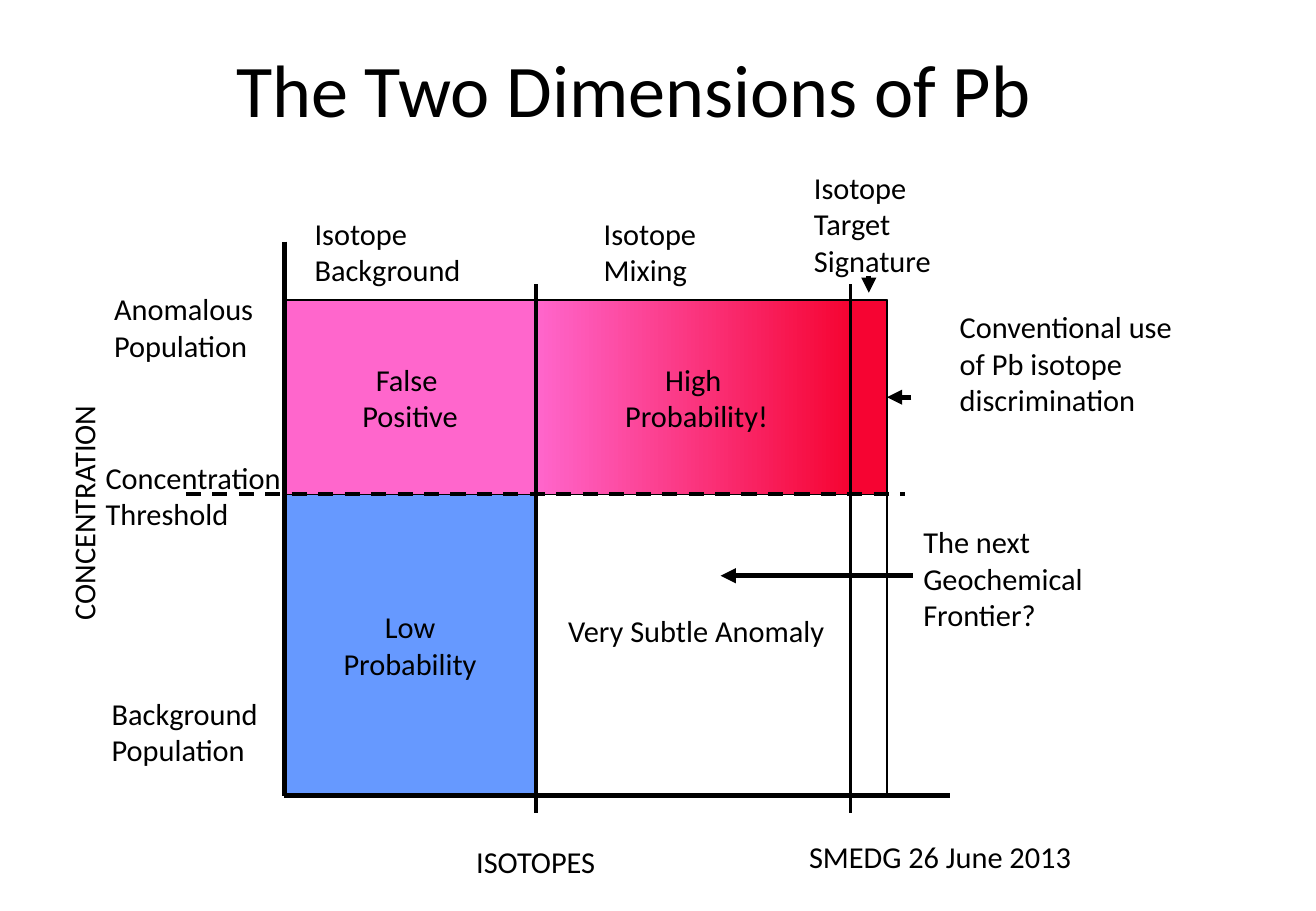
from dataclasses import dataclass
from typing import Any

from lxml import etree
from pptx import Presentation
from pptx import util as u
from pptx.dml.color import RGBColor
from pptx.enum import dml, shapes, text
from pptx.oxml import ns

COLORS = {"ink": "000000", "pink": "FF66CC", "red": "F60432", "blue": "6699FF"}
LEFT, BACKGROUND_EDGE, TARGET_EDGE, RIGHT = 2.34, 4.41, 7.0, 7.3
TOP, THRESHOLD, BOTTOM = 2.47, 4.07, 6.55
TARGET_MIDDLE = (TOP + THRESHOLD) / 2
BODY_FONT = {"name": "Calibri", "size": u.Pt(18)}
TITLE_FONT = {"name": "Calibri", "size": u.Pt(44)}
LABEL_FRAME = {"word_wrap": False, "auto_size": text.MSO_AUTO_SIZE.SHAPE_TO_FIT_TEXT}
CENTRED_FRAME = {"word_wrap": False, "vertical_anchor": text.MSO_ANCHOR.MIDDLE}
TITLE_FRAME = {"word_wrap": True, "margin_top": u.Inches(0.08)}


@dataclass
class Cell:
    left: float
    top: float
    right: float
    bottom: float
    fills: tuple[str, ...] = ()
    lines: tuple[str, ...] = ()


@dataclass
class Line:
    x1: float
    y1: float
    x2: float
    y2: float
    width: float
    dashed: bool = False
    arrow: bool = False


@dataclass
class Label:
    left: float
    top: float
    width: float
    height: float
    lines: tuple[str, ...]
    rotation: float = 0


FRAME = Cell(LEFT, TOP, RIGHT, BOTTOM)
GRID_LINES = [
    Line(LEFT, THRESHOLD, RIGHT, THRESHOLD, 0.75),
    Line(TARGET_EDGE, TOP, TARGET_EDGE, BOTTOM, 0.75),
    Line(BACKGROUND_EDGE, TOP, BACKGROUND_EDGE, BOTTOM, 0.75, dashed=True),
]
TARGET = Cell(TARGET_EDGE, TOP, RIGHT, THRESHOLD, ("red",))
CELLS = [
    Cell(BACKGROUND_EDGE, TOP, TARGET_EDGE, THRESHOLD, ("pink", "red"), ("High", " Probability!")),
    Cell(LEFT, TOP, BACKGROUND_EDGE, THRESHOLD, ("pink",), ("False ", "Positive")),
    Cell(LEFT, THRESHOLD, BACKGROUND_EDGE, BOTTOM, ("blue",), ("Low", "Probability")),
]
MAIN_LINES = [
    Line(1.53, THRESHOLD, 7.45, THRESHOLD, 2.25, dashed=True),
    Line(TARGET_EDGE, 2.34, TARGET_EDGE, 6.69, 2.25),
    Line(BACKGROUND_EDGE, 2.34, BACKGROUND_EDGE, 6.69, 2.25),
    Line(LEFT, 1.99, LEFT, BOTTOM, 3),
    Line(LEFT, BOTTOM, 7.82, BOTTOM, 3),
    Line(7.15, 2.27, 7.15, 2.41, 3, arrow=True),
    Line(7.51, 4.74, 5.93, 4.74, 3, arrow=True),
]
CONVENTIONAL_ARROW = Line(7.5, TARGET_MIDDLE, RIGHT, TARGET_MIDDLE, 3, arrow=True)
TITLE = Label(0.34, 0.28, 9.75, 1.25, ("The Two Dimensions of Pb",))
SUBTLE_ANOMALY = Label(4.5, 4.39, 2.46, 1.59, ("Very Subtle Anomaly",))
LABELS = [
    Label(3.82, 6.89, 1.19, 0.4, ("ISOTOPES",)),
    Label(7.8, 2.49, 2.03, 1.31, ("Conventional use", "of Pb isotope", "discrimination")),
    Label(0.77, 3.73, 1.72, 0.71, ("Concentration", "Threshold")),
    Label(0.82, 5.67, 1.42, 0.71, ("Background", "Population")),
    Label(0.84, 2.34, 1.42, 0.71, ("Anomalous", "Population")),
    Label(-0.31, 4.01, 1.99, 0.4, ("CONCENTRATION",), 270),
    Label(6.6, 1.34, 1.17, 1.01, ("Isotope", "Target", "Signature")),
    Label(2.49, 1.72, 1.42, 0.71, ("Isotope", "Background")),
    Label(4.87, 1.72, 1.03, 0.71, ("Isotope", "Mixing")),
    Label(7.5, 4.26, 1.53, 1.01, ("The next", "Geochemical", "Frontier?")),
]
EVENT = Label(6.56, 6.85, 3.43, 0.4, ("SMEDG 26 June 2013",))


def color(name: str) -> RGBColor:
    return RGBColor.from_string(COLORS[name])


def apply(target: Any, values: dict[str, Any]) -> None:
    for name, value in values.items():
        setattr(target, name, value)


def write(frame: Any, lines: tuple[str, ...], frame_format: dict[str, Any],
          font: dict[str, Any], alignment: text.PP_ALIGN) -> None:
    apply(frame, frame_format)
    for index, line in enumerate(lines):
        paragraph = frame.add_paragraph() if index else frame.paragraphs[0]
        paragraph.alignment = alignment
        run = paragraph.add_run()
        run.text = line
        apply(run.font, font)
        run.font.color.rgb = color("ink")


def add_cell(slide: Any, cell: Cell) -> Any:
    """Draw a rectangle: no fill, one plain colour, or a left-to-right gradient."""
    shape = slide.shapes.add_shape(
        shapes.MSO_SHAPE.RECTANGLE, u.Inches(cell.left), u.Inches(cell.top),
        u.Inches(cell.right - cell.left), u.Inches(cell.bottom - cell.top))
    shape.shadow.inherit = False
    shape.line.color.rgb = color("ink")
    shape.line.width = u.Pt(0.75)
    if not cell.fills:
        shape.fill.background()
    elif len(cell.fills) == 1:
        shape.fill.solid()
        shape.fill.fore_color.rgb = color(cell.fills[0])
    else:
        shape.fill.gradient()
        shape.fill.gradient_angle = 0
        for position, (stop, name) in enumerate(zip(shape.fill.gradient_stops, cell.fills)):
            stop.color.rgb = color(name)
            stop.position = position
    write(shape.text_frame, cell.lines, CENTRED_FRAME, BODY_FONT, text.PP_ALIGN.CENTER)
    return shape


def add_line(slide: Any, line: Line) -> Any:
    connector = slide.shapes.add_connector(
        shapes.MSO_CONNECTOR.STRAIGHT, u.Inches(line.x1), u.Inches(line.y1),
        u.Inches(line.x2), u.Inches(line.y2))
    connector.line.color.rgb = color("ink")
    connector.line.width = u.Pt(line.width)
    if line.dashed:
        connector.line.dash_style = dml.MSO_LINE.DASH
    if line.arrow:
        outline = connector.line._get_or_add_ln()
        etree.SubElement(outline, ns.qn("a:tailEnd"), type="triangle")
    etree.SubElement(connector._element.spPr, ns.qn("a:effectLst"))
    return connector


def add_label(slide: Any, label: Label, frame_format: dict[str, Any],
              font: dict[str, Any] = BODY_FONT,
              alignment: text.PP_ALIGN = text.PP_ALIGN.LEFT) -> None:
    box = slide.shapes.add_textbox(u.Inches(label.left), u.Inches(label.top),
                                   u.Inches(label.width), u.Inches(label.height))
    box.rotation = label.rotation
    write(box.text_frame, label.lines, frame_format, font, alignment)


def main() -> None:
    presentation = Presentation()
    presentation.slide_width = u.Inches(10.83)
    presentation.slide_height = u.Inches(7.5)
    slide = presentation.slides.add_slide(presentation.slide_layouts[6])

    add_label(slide, TITLE, TITLE_FRAME, TITLE_FONT, text.PP_ALIGN.CENTER)
    add_cell(slide, FRAME)
    for line in GRID_LINES:
        add_line(slide, line)
    target = add_cell(slide, TARGET)
    for cell in CELLS:
        add_cell(slide, cell)
    for line in MAIN_LINES:
        add_line(slide, line)
    add_line(slide, CONVENTIONAL_ARROW).end_connect(target, 3)
    for label in LABELS:
        add_label(slide, label, LABEL_FRAME)
    add_label(slide, SUBTLE_ANOMALY, CENTRED_FRAME, alignment=text.PP_ALIGN.CENTER)
    add_label(slide, EVENT, {"word_wrap": True})
    presentation.save("out.pptx")


if __name__ == "__main__":
    main()
